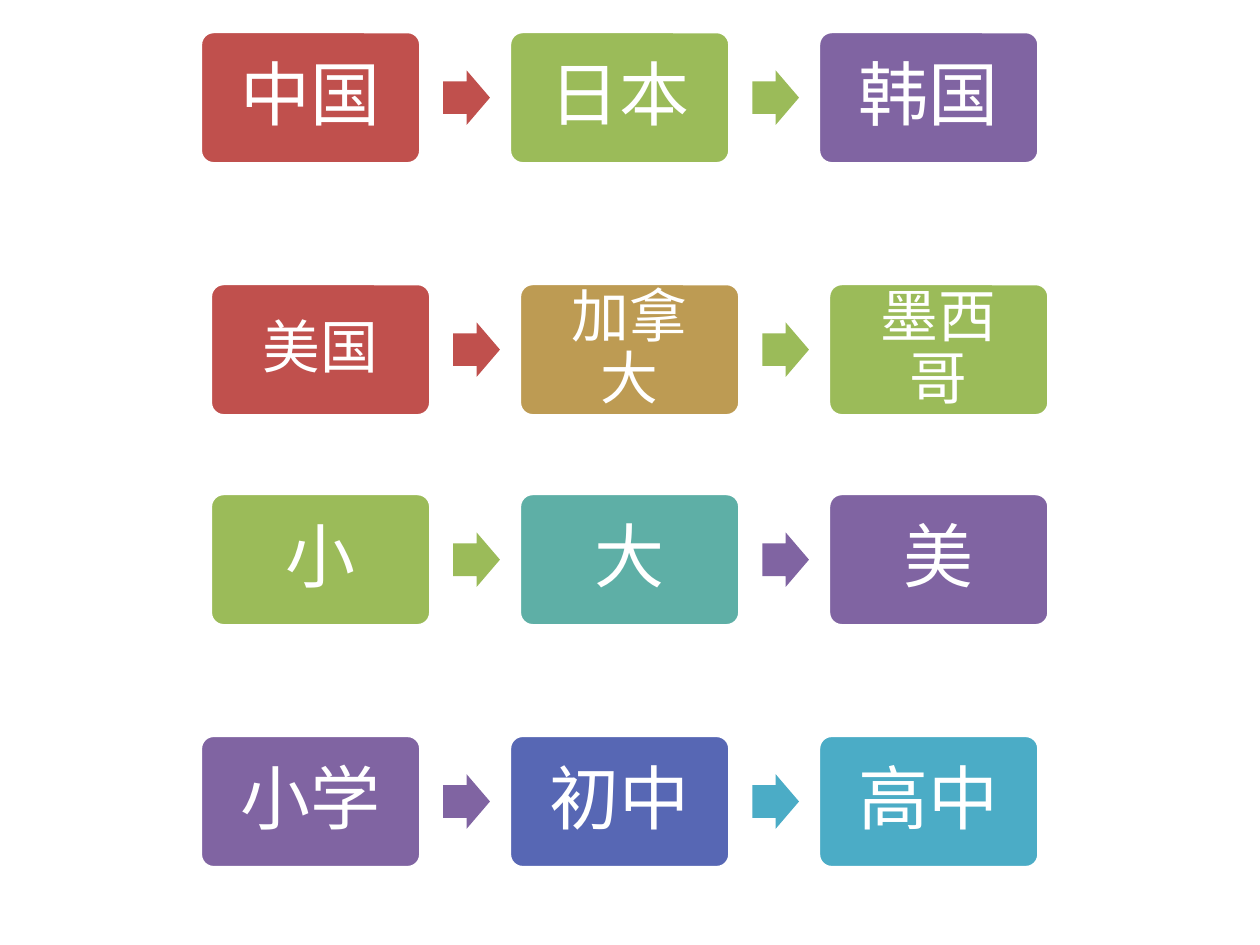
from typing import NamedTuple

from pptx import Presentation
from pptx.dml.color import RGBColor
from pptx.enum.shapes import MSO_SHAPE
from pptx.enum.text import MSO_ANCHOR, PP_ALIGN
from pptx.shapes.autoshape import Shape
from pptx.shapes.shapetree import SlideShapes
from pptx.util import Pt

WHITE = RGBColor(0xFF, 0xFF, 0xFF)
RED = RGBColor(0xC0, 0x50, 0x4D)
GREEN = RGBColor(0x9B, 0xBB, 0x59)
PURPLE = RGBColor(0x80, 0x64, 0xA2)
GOLD = RGBColor(0xBD, 0x9B, 0x53)
TEAL = RGBColor(0x5E, 0xAF, 0xA6)
BLUE = RGBColor(0x57, 0x67, 0xB4)
AQUA = RGBColor(0x4B, 0xAC, 0xC6)

FONT = "Calibri"
BOX_W, BOX_H = 126, 75.6
STEP = 176.6
ARROW_X = 138.8
ARROW_W, ARROW_H = 26.7, 31.2


class Chain(NamedTuple):
    left: float
    top: float
    size: int
    inset: float
    words: tuple[str, ...]
    fills: tuple[RGBColor, ...]
    arrows: tuple[RGBColor, ...]


CHAINS = (
    Chain(114.5, 18, 40, 14.4, ("中国", "日本", "韩国"),
          (RED, GREEN, PURPLE), (RED, GREEN)),
    Chain(120.2, 162, 33, 12.2, ("美国", "加拿大", "墨西哥"),
          (RED, GOLD, GREEN), (RED, GREEN)),
    Chain(120.2, 282, 40, 14.4, ("小", "大", "美"),
          (GREEN, TEAL, PURPLE), (GREEN, PURPLE)),
    Chain(114.5, 420.2, 40, 14.4, ("小学", "初中", "高中"),
          (PURPLE, BLUE, AQUA), (PURPLE, AQUA)),
)


def add_shape(shapes: SlideShapes, kind: MSO_SHAPE, left: float, top: float,
              width: float, height: float, fill: RGBColor) -> Shape:
    shape = shapes.add_shape(kind, Pt(left), Pt(top), Pt(width), Pt(height))
    shape.shadow.inherit = False
    shape.fill.solid()
    shape.fill.fore_color.rgb = fill
    return shape


def add_box(shapes: SlideShapes, chain: Chain, left: float,
            word: str, fill: RGBColor) -> None:
    box = add_shape(shapes, MSO_SHAPE.ROUNDED_RECTANGLE, left, chain.top,
                    BOX_W, BOX_H, fill)
    box.adjustments[0] = 0.1
    box.line.color.rgb = WHITE
    box.line.width = Pt(2)
    frame = box.text_frame
    frame.text = word
    frame.word_wrap = True
    frame.vertical_anchor = MSO_ANCHOR.MIDDLE
    frame.margin_left = frame.margin_right = Pt(chain.inset)
    frame.margin_top = frame.margin_bottom = Pt(chain.inset)
    para = frame.paragraphs[0]
    para.alignment = PP_ALIGN.CENTER
    para.line_spacing = 0.9
    font = para.runs[0].font
    font.name = FONT
    font.size = Pt(chain.size)
    font.color.rgb = WHITE


def add_arrow(shapes: SlideShapes, chain: Chain, left: float,
              fill: RGBColor) -> None:
    top = chain.top + (BOX_H - ARROW_H) / 2
    arrow = add_shape(shapes, MSO_SHAPE.RIGHT_ARROW, left, top,
                      ARROW_W, ARROW_H, fill)
    arrow.adjustments[0] = 0.6
    arrow.adjustments[1] = 0.5
    arrow.line.fill.background()


def add_chain(shapes: SlideShapes, chain: Chain) -> None:
    for i, (word, fill) in enumerate(zip(chain.words, chain.fills)):
        left = chain.left + i * STEP
        add_box(shapes, chain, left, word, fill)
        if i < len(chain.arrows):
            add_arrow(shapes, chain, left + ARROW_X, chain.arrows[i])


def main() -> None:
    deck = Presentation()
    deck.slide_width, deck.slide_height = Pt(720), Pt(540)
    slide = deck.slides.add_slide(deck.slide_layouts[6])
    for chain in CHAINS:
        add_chain(slide.shapes, chain)
    deck.save("out.pptx")


if __name__ == "__main__":
    main()
